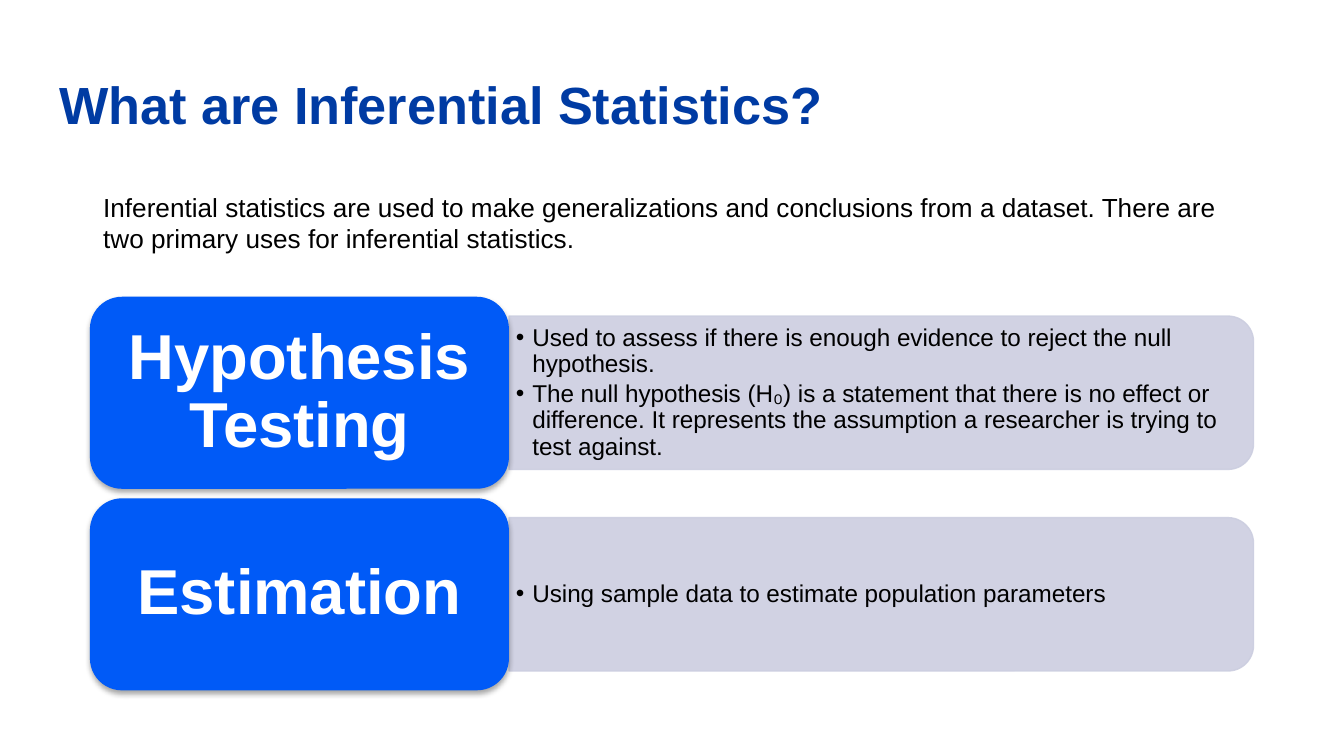
from dataclasses import dataclass

from lxml.etree import SubElement
from pptx import Presentation
from pptx.dml.color import RGBColor
from pptx.enum.shapes import MSO_SHAPE
from pptx.enum.text import MSO_ANCHOR, MSO_AUTO_SIZE, PP_ALIGN
from pptx.oxml.ns import qn
from pptx.shapes.autoshape import Shape
from pptx.slide import Slide
from pptx.text.text import TextFrame
from pptx.util import Cm, Pt


@dataclass(frozen=True)
class Theme:
    font: str = "Arial"
    title_color: str = "003BA3"
    card_color: str = "005AF7"
    panel_color: str = "CCCEE0"
    text_color: str = "000000"
    card_text_color: str = "FFFFFF"
    title_size: int = 28
    intro_size: int = 14
    card_size: int = 34
    list_size: int = 13


@dataclass(frozen=True)
class Box:
    left: float
    top: float
    width: float
    height: float


@dataclass(frozen=True)
class Use:
    heading: str
    points: tuple[str, ...]


THEME = Theme()
FIRST_CARD = Box(1.7, 5.61, 7.92, 3.63)
CARD_PITCH = 3.81
PANEL_WIDTH = 14.07
PANEL_HEIGHT = 2.9
LIST_WIDTH = 13.94
LIST_HEIGHT = 2.62
LIST_INDENT = 0.31

INTRO = (
    "Inferential statistics are used to make generalizations and conclusions "
    "from a dataset. There are two primary uses for inferential statistics."
)
USES = (
    Use(
        "Hypothesis Testing",
        (
            "Used to assess if there is enough evidence to reject the null hypothesis.",
            "The null hypothesis (H₀) is a statement that there is no effect or difference. "
            "It represents the assumption a researcher is trying to test against.",
        ),
    ),
    Use("Estimation", ("Using sample data to estimate population parameters",)),
)


def place(shape: Shape, box: Box) -> None:
    shape.left, shape.top = Cm(box.left), Cm(box.top)
    shape.width, shape.height = Cm(box.width), Cm(box.height)


def add_bullet(paragraph) -> None:
    properties = paragraph._p.get_or_add_pPr()
    properties.set("marL", str(Cm(LIST_INDENT)))
    properties.set("indent", str(-Cm(LIST_INDENT)))
    bullet_color = SubElement(properties, qn("a:buClr"))
    SubElement(bullet_color, qn("a:srgbClr"), val=THEME.text_color)
    SubElement(properties, qn("a:buFont"), typeface=THEME.font)
    SubElement(properties, qn("a:buChar"), char="•")


def write_text(
    frame: TextFrame,
    *texts: str,
    size: int,
    color: str,
    bold: bool = False,
    align: PP_ALIGN = PP_ALIGN.LEFT,
    anchor: MSO_ANCHOR = MSO_ANCHOR.MIDDLE,
    margins: tuple[float, float] = (0.25, 0.13),
    line_spacing: float = 0.9,
    space_after: float = 0,
    bullets: bool = False,
) -> None:
    frame.word_wrap = True
    frame.auto_size = MSO_AUTO_SIZE.NONE
    frame.vertical_anchor = anchor
    frame.margin_left = frame.margin_right = Cm(margins[0])
    frame.margin_top = frame.margin_bottom = Cm(margins[1])
    for index, text in enumerate(texts):
        paragraph = frame.add_paragraph() if index else frame.paragraphs[0]
        if bullets:
            add_bullet(paragraph)
        paragraph.alignment = align
        paragraph.line_spacing = line_spacing
        paragraph.space_before = Pt(0)
        paragraph.space_after = Pt(space_after)
        run = paragraph.add_run()
        run.text = text
        run.font.name = THEME.font
        run.font.size = Pt(size)
        run.font.bold = bold
        run.font.color.rgb = RGBColor.from_string(color)


def add_panel(slide: Slide, left: float, middle: float) -> None:
    box = Box(
        left + (PANEL_WIDTH - PANEL_HEIGHT) / 2,
        middle - PANEL_WIDTH / 2,
        PANEL_HEIGHT,
        PANEL_WIDTH,
    )
    panel = slide.shapes.add_shape(MSO_SHAPE.ROUND_2_SAME_RECTANGLE, 0, 0, 0, 0)
    place(panel, box)
    panel.rotation = 90
    panel.shadow.inherit = False
    panel.line.width = Pt(0.75)
    for fill in (panel.fill, panel.line.fill):
        fill.solid()
        fill.fore_color.rgb = RGBColor.from_string(THEME.panel_color)
    for color in panel.element.spPr.iter(qn("a:srgbClr")):
        SubElement(color, qn("a:alpha"), val="90000")


def add_card(slide: Slide, box: Box, heading: str) -> None:
    card = slide.shapes.add_shape(MSO_SHAPE.ROUNDED_RECTANGLE, 0, 0, 0, 0)
    place(card, box)
    card.fill.solid()
    card.fill.fore_color.rgb = RGBColor.from_string(THEME.card_color)
    card.line.fill.background()
    card.shadow.inherit = False
    effects = card.element.spPr.find(qn("a:effectLst"))
    shadow = SubElement(
        effects,
        qn("a:outerShdw"),
        blurRad=str(Pt(3.1)),
        dist=str(Pt(1.8)),
        dir="5400000",
        rotWithShape="0",
    )
    shadow_color = SubElement(shadow, qn("a:srgbClr"), val="000000")
    SubElement(shadow_color, qn("a:alpha"), val="35000")
    write_text(card.text_frame, heading, size=THEME.card_size, color=THEME.card_text_color,
               bold=True, align=PP_ALIGN.CENTER, margins=(0.36, 0.18))


def add_use(slide: Slide, use: Use, index: int) -> None:
    top = FIRST_CARD.top + index * CARD_PITCH
    middle = top + FIRST_CARD.height / 2
    right = FIRST_CARD.left + FIRST_CARD.width
    add_panel(slide, right, middle)
    body = slide.placeholders[index + 1]
    place(body, Box(right, middle - LIST_HEIGHT / 2, LIST_WIDTH, LIST_HEIGHT))
    body.element.getparent().append(body.element)
    write_text(body.text_frame, *use.points, size=THEME.list_size, color=THEME.text_color,
               margins=(0.13, 0.08), space_after=2, bullets=True)
    add_card(slide, Box(FIRST_CARD.left, top, FIRST_CARD.width, FIRST_CARD.height), use.heading)


def main() -> None:
    presentation = Presentation()
    presentation.slide_width, presentation.slide_height = Cm(25.4), Cm(14.29)
    slide = presentation.slides.add_slide(presentation.slide_layouts[3])

    title = slide.shapes.title
    place(title, Box(0.87, 1.24, 23.67, 1.6))
    write_text(title.text_frame, "What are Inferential Statistics?", size=THEME.title_size,
               color=THEME.title_color, bold=True, margins=(0.25, 0.25))

    for index, use in enumerate(USES):
        add_use(slide, use, index)

    intro = slide.shapes.add_textbox(0, 0, 0, 0)
    place(intro, Box(1.7, 3.48, 22, 1.45))
    write_text(intro.text_frame, INTRO, size=THEME.intro_size, color=THEME.text_color,
               anchor=MSO_ANCHOR.TOP, line_spacing=1)

    presentation.save("out.pptx")


if __name__ == "__main__":
    main()
